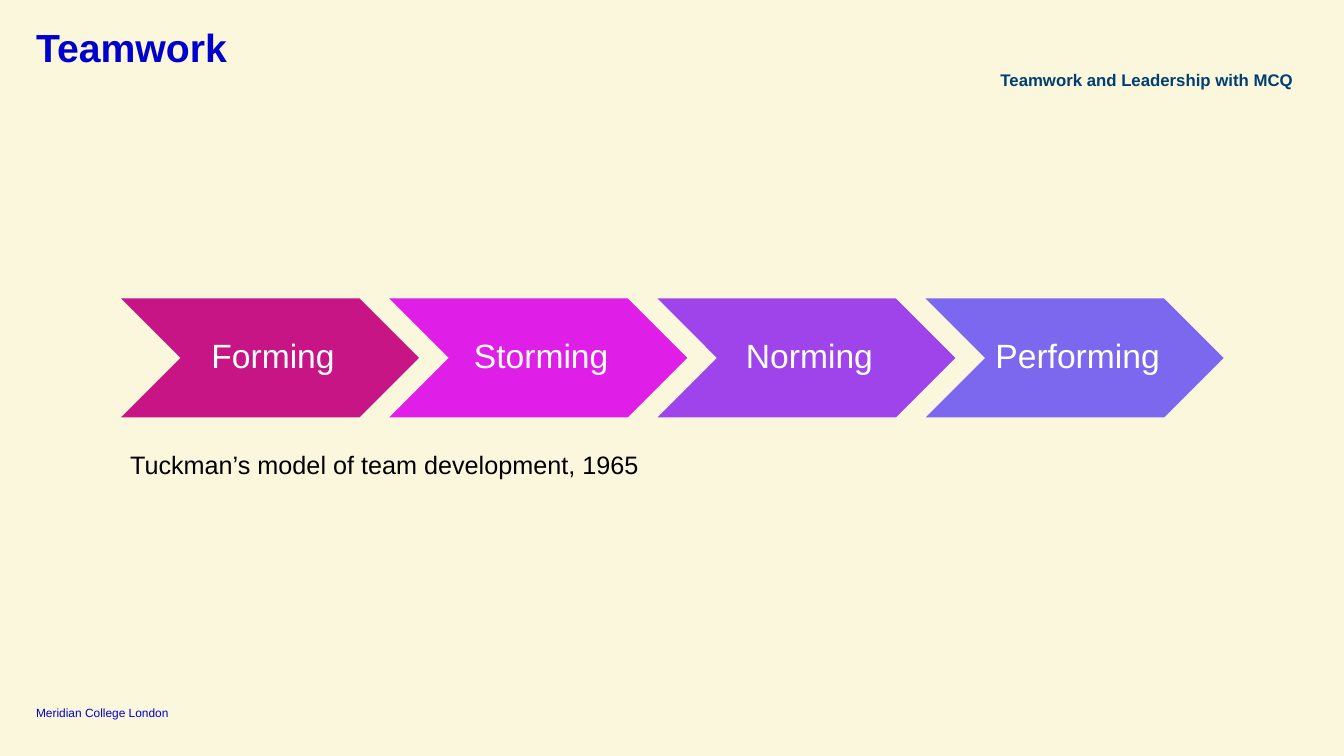
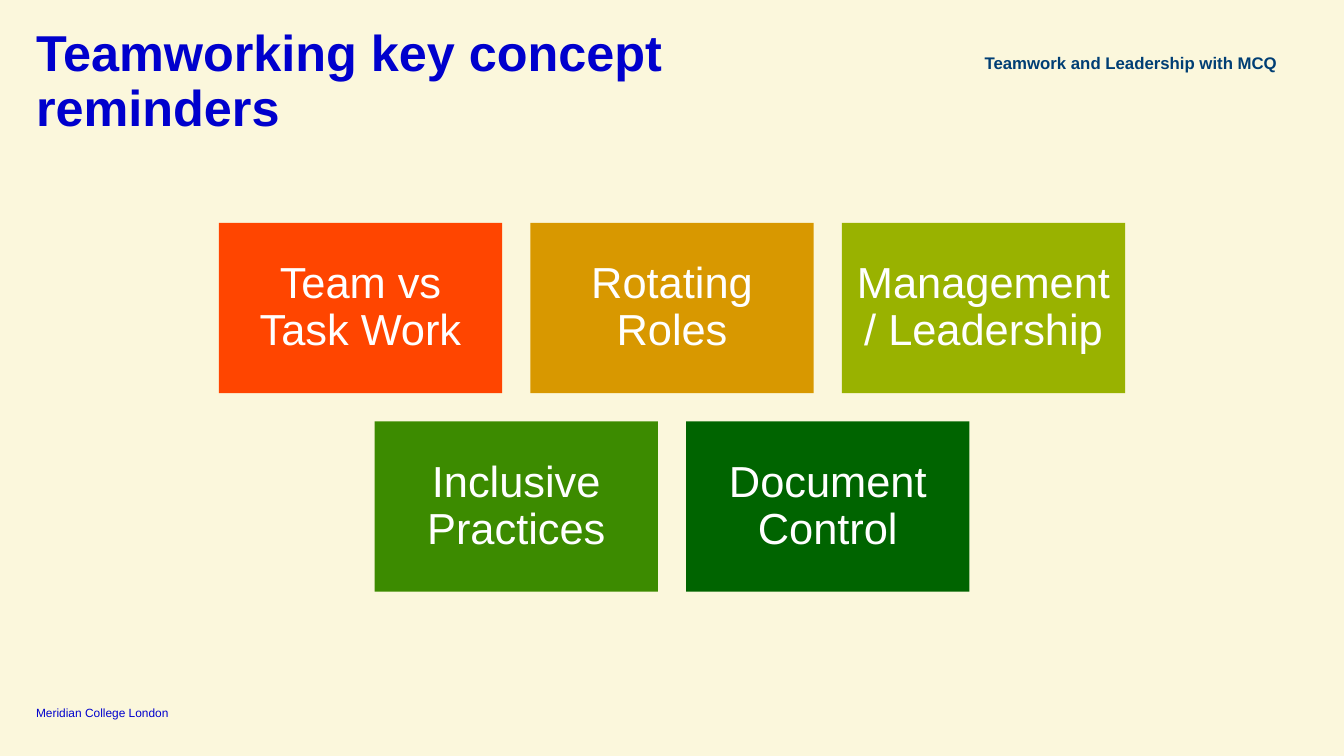
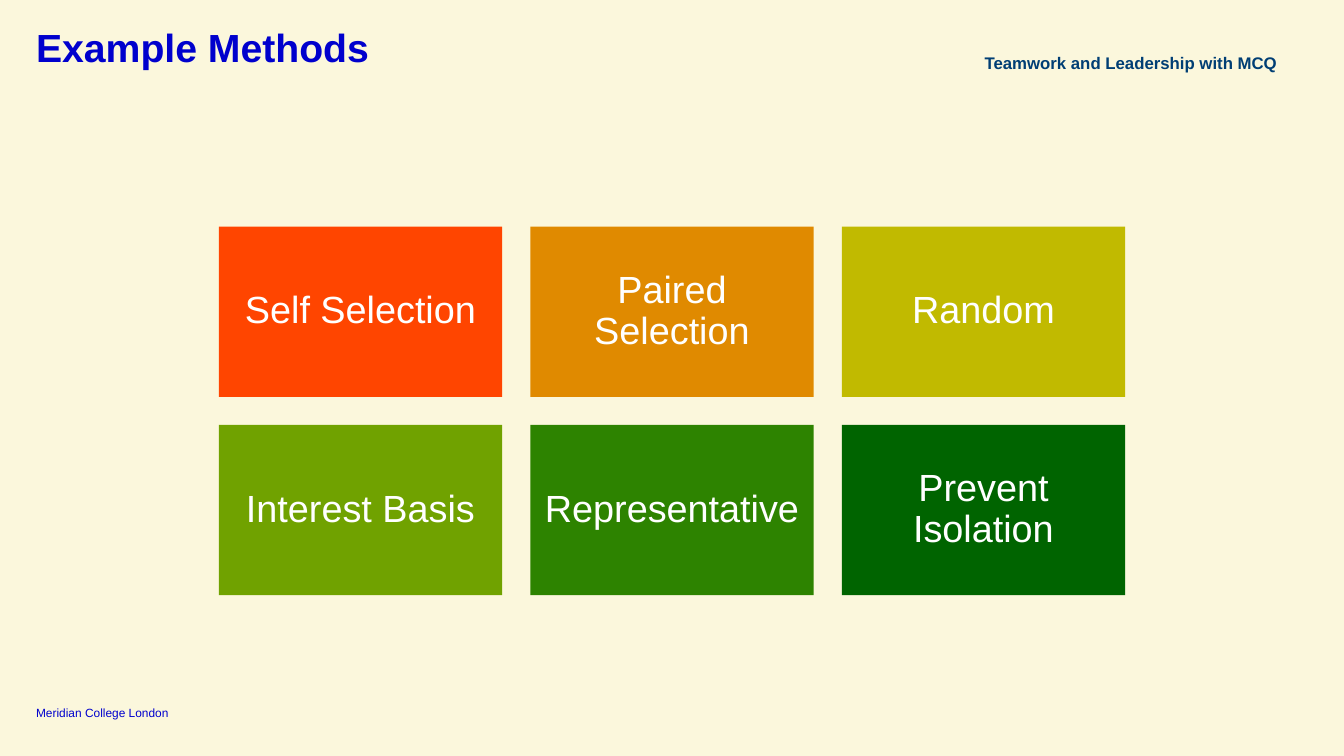
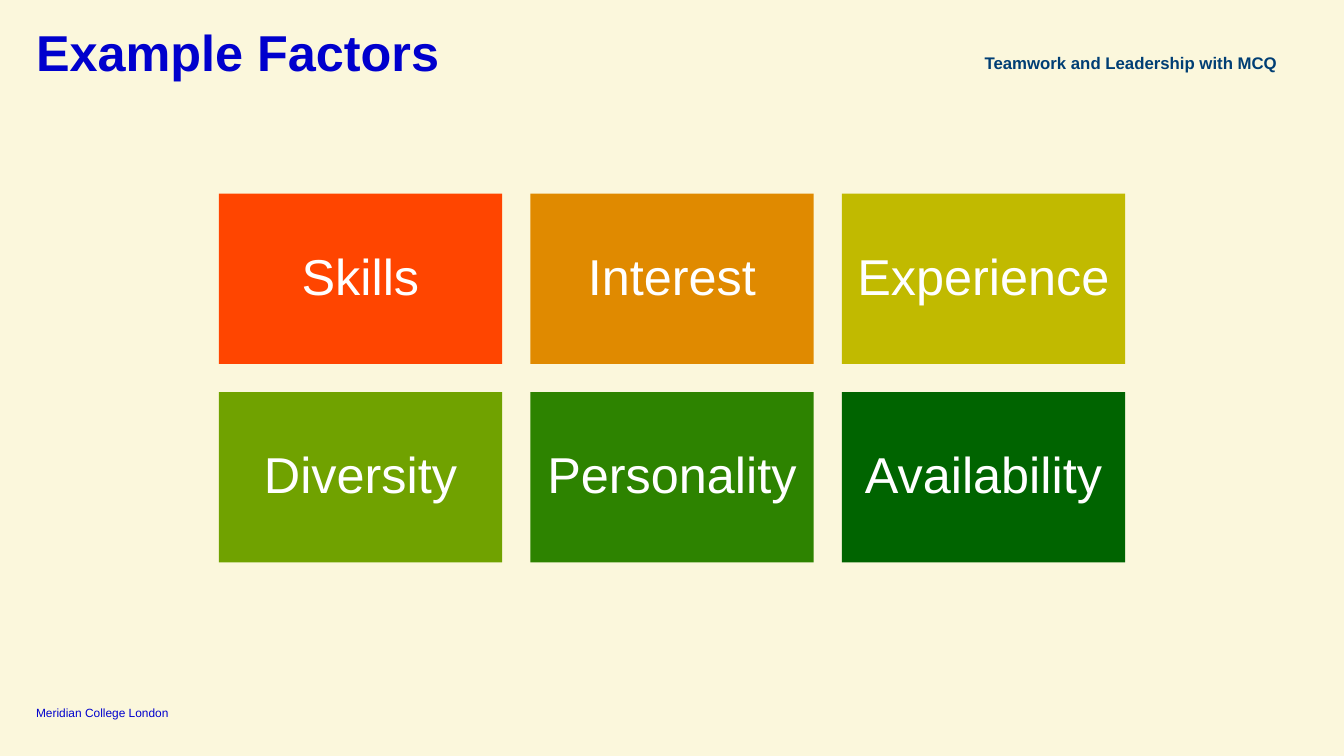
import pptx
import pptx.util
import pptx.dml.color
import pptx.enum.shapes
import pptx.enum.text

Cm = pptx.util.Cm
RGBColor = pptx.dml.color.RGBColor
MSO_SHAPE = pptx.enum.shapes.MSO_SHAPE
ALIGN = pptx.enum.text.PP_ALIGN
ANCHOR = pptx.enum.text.MSO_ANCHOR

# Colours
CREAM = RGBColor(0xFB, 0xF7, 0xDC)
BLUE = RGBColor(0x00, 0x00, 0xCD)
NAVY = RGBColor(0x00, 0x3E, 0x74)
BLACK = RGBColor(0x00, 0x00, 0x00)
WHITE = RGBColor(0xFF, 0xFF, 0xFF)
CRIMSON = RGBColor(0xC7, 0x15, 0x85)
MAGENTA = RGBColor(0xDF, 0x1E, 0xE7)
PURPLE = RGBColor(0x9F, 0x43, 0xEA)
SLATE = RGBColor(0x7B, 0x68, 0xEE)
ORANGE = RGBColor(0xFF, 0x45, 0x00)
GOLD = RGBColor(0xD8, 0x98, 0x00)
LIME = RGBColor(0x99, 0xB2, 0x00)
LEAF = RGBColor(0x3C, 0x8B, 0x00)
AMBER = RGBColor(0xE0, 0x8A, 0x00)
MUSTARD = RGBColor(0xC1, 0xBA, 0x00)
OLIVE = RGBColor(0x70, 0xA2, 0x00)
GREEN = RGBColor(0x2D, 0x83, 0x00)
FOREST = RGBColor(0x00, 0x64, 0x00)

FIVE_COLOURS = [ORANGE, GOLD, LIME, LEAF, FOREST]
SIX_COLOURS = [ORANGE, AMBER, MUSTARD, OLIVE, GREEN, FOREST]

# Measures in centimetres
SLIDE_W, SLIDE_H = 33.87, 19.05
MARGIN = 0.91
CARD_W, CARD_H, CARD_GAP = 7.14, 4.29, 0.71
CARDS_PER_ROW = 3
STEP_W, STEP_H = 7.51, 3.0


def write_text(shape, text, *, size, colour, bold=False, align=ALIGN.LEFT,
               anchor=ANCHOR.TOP, spacing=1.0, insets=(0, 0, 0, 0)):
    """Fill a shape with one formatted paragraph; insets are left, top, right, bottom."""
    frame = shape.text_frame
    frame.word_wrap = True
    frame.vertical_anchor = anchor
    (frame.margin_left, frame.margin_top,
     frame.margin_right, frame.margin_bottom) = map(Cm, insets)
    paragraph = frame.paragraphs[0]
    paragraph.alignment = align
    paragraph.line_spacing = spacing
    run = paragraph.add_run()
    run.text = text
    run.font.name = "Arial"
    run.font.size = pptx.util.Pt(size)
    run.font.bold = bold
    run.font.color.rgb = colour


class Deck:
    def __init__(self):
        self.prs = pptx.Presentation()
        self.prs.slide_width, self.prs.slide_height = Cm(SLIDE_W), Cm(SLIDE_H)
        background = self.prs.slide_master.background.fill
        background.solid()
        background.fore_color.rgb = CREAM
        self.slide = None

    def new_slide(self, title, title_size=28, title_width=32.05, topic_at=(23.5, 1.3)):
        """Start a slide with its footer, title and topic label."""
        self.slide = self.prs.slides.add_slide(self.prs.slide_layouts[6])
        self.label("Meridian College London", MARGIN, 17.75, 3.94, 0.38,
                   size=8.5, colour=BLUE, anchor=ANCHOR.BOTTOM)
        self.label(title, MARGIN, 0.71, title_width, 1.04,
                   size=title_size, colour=BLUE, bold=True, spacing=0.9)
        self.label("Teamwork and Leadership with MCQ", *topic_at, 8.69, 0.86,
                   size=12, colour=NAVY, bold=True, align=ALIGN.RIGHT, spacing=1.05)

    def label(self, text, left, top, width, height, **style):
        box = self.slide.shapes.add_textbox(Cm(left), Cm(top), Cm(width), Cm(height))
        write_text(box, text, **style)

    def block(self, kind, text, left, top, width, height, fill, size, insets):
        shape = self.slide.shapes.add_shape(kind, Cm(left), Cm(top), Cm(width), Cm(height))
        shape.shadow.inherit = False
        shape.fill.solid()
        shape.fill.fore_color.rgb = fill
        shape.line.fill.background()
        write_text(shape, text, size=size, colour=WHITE, align=ALIGN.CENTER,
                   anchor=ANCHOR.MIDDLE, spacing=0.9, insets=insets)

    def process(self, steps, left, top):
        """Row of chevrons, each overlapping the next by a tenth."""
        for i, (text, fill) in enumerate(steps):
            self.block(MSO_SHAPE.CHEVRON, text, left + i * STEP_W * 0.9, top,
                       STEP_W, STEP_H, fill, 24, (0.15, 0.1, 0, 0.1))

    def cards(self, texts, colours, top, size):
        """Rows of cards, each row centred on the slide."""
        inset = size / 95
        for i, (text, fill) in enumerate(zip(texts, colours)):
            row, column = divmod(i, CARDS_PER_ROW)
            in_row = min(CARDS_PER_ROW, len(texts) - row * CARDS_PER_ROW)
            row_width = in_row * (CARD_W + CARD_GAP) - CARD_GAP
            self.block(MSO_SHAPE.RECTANGLE, text,
                       (SLIDE_W - row_width) / 2 + column * (CARD_W + CARD_GAP),
                       top + row * (CARD_H + CARD_GAP),
                       CARD_W, CARD_H, fill, size, (inset,) * 4)


def main():
    deck = Deck()

    # Stages of team development
    deck.new_slide("Teamwork", topic_at=(23.9, 1.73))
    deck.process([("Forming", CRIMSON), ("Storming", MAGENTA),
                  ("Norming", PURPLE), ("Performing", SLATE)], left=3.05, top=7.52)
    deck.label("Tuckman’s model of team development, 1965", 3.03, 11.2, 22.58, 1.03,
               size=18, colour=BLACK, insets=(0.25, 0.13, 0.25, 0.13))

    # Key concepts
    deck.new_slide("Teamworking key concept reminders", title_size=36, title_width=21.72)
    deck.cards(["Team vs Task Work", "Rotating Roles", "Management / Leadership",
                "Inclusive Practices", "Document Control"],
               FIVE_COLOURS, top=5.62, size=31)

    # Methods
    deck.new_slide("Example Methods")
    deck.cards(["Self Selection", "Paired Selection", "Random",
                "Interest Basis", "Representative", "Prevent Isolation"],
               SIX_COLOURS, top=5.71, size=27)

    # Factors
    deck.new_slide("Example Factors", title_size=36)
    deck.cards(["Skills", "Interest", "Experience",
                "Diversity", "Personality", "Availability"],
               SIX_COLOURS, top=4.88, size=36)

    deck.prs.save("out.pptx")


if __name__ == "__main__":
    main()
